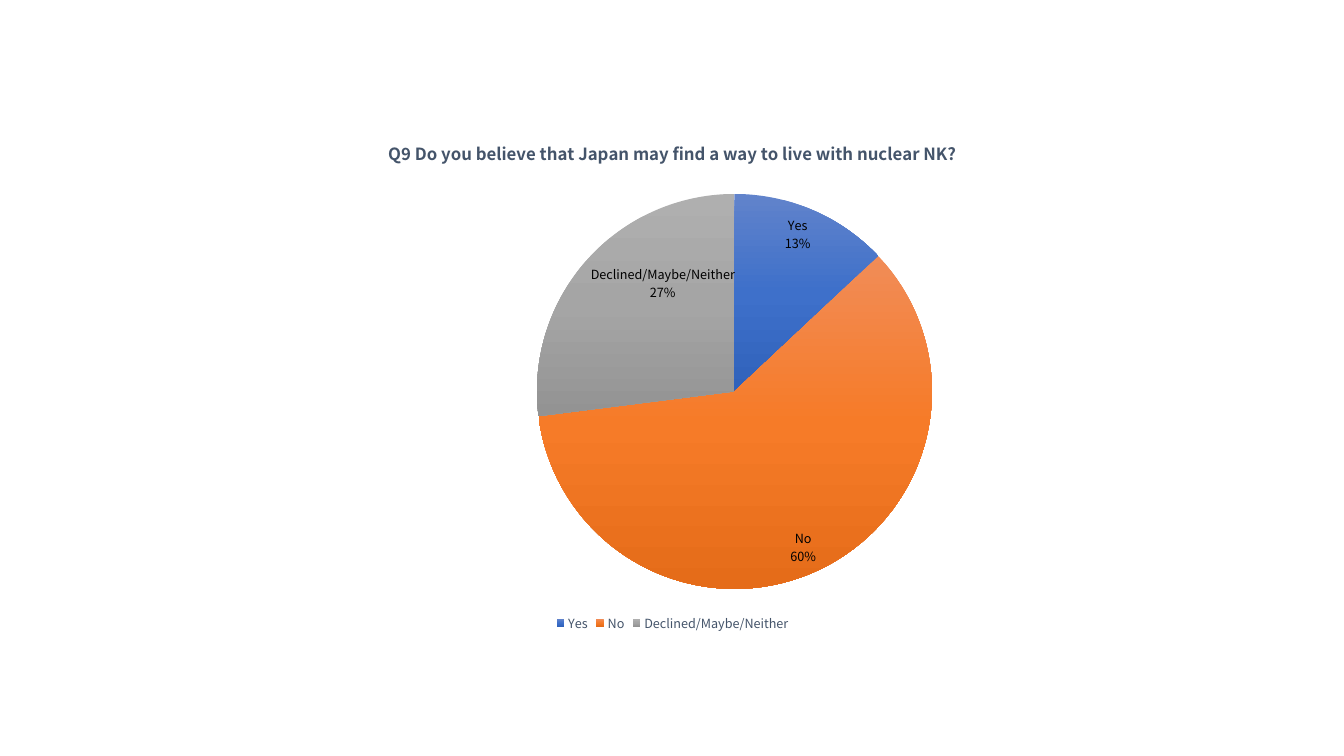
from pptx import Presentation
from pptx import util as u
from pptx.chart import data
from pptx.dml import color
from pptx.enum import chart as kinds
from pptx.oxml import ns, parse_xml

SCALE = 914400 / 100.8
FONT = "Noto Sans CJK KR"
COLORS = {"title": "44546A", "label": "000000"}
QUESTION = "Q9 Do you believe that Japan may find a way to live with nuclear NK?"
ANSWERS = {
    "Yes": (13, ("6183CB", "3E70CA", "3062BB")),
    "No": (60, ("F18C57", "F67B28", "E56C19")),
    "Declined/Maybe/Neither": (27, ("AFAFAF", "A5A5A5", "939393")),
}


def px(length):
    return u.Emu(round(length * SCALE))


def style_font(font, size, tint, bold=False):
    font.name = FONT
    font.size = u.Pt(size)
    font.bold = bold
    font.color.rgb = color.RGBColor.from_string(COLORS[tint])


def write_text(frame, wording, **style):
    span = frame.paragraphs[0].add_run()
    span.text = wording
    style_font(span.font, **style)


class SurveySlide:
    """Holds the survey style and the slide being drawn."""

    def __init__(self, deck):
        self.page = deck.slides.add_slide(deck.slide_layouts[6])

    def add_pie(self, title, answers, box, pie_box):
        numbers = data.CategoryChartData(number_format="0")
        numbers.categories = list(answers)
        numbers.add_series(title, [share for share, _ in answers.values()])
        frame = self.page.shapes.add_chart(
            kinds.XL_CHART_TYPE.PIE, *map(px, box), numbers)
        chart = frame.chart
        style_font(chart.font, size=10, tint="label")
        chart.has_title = True
        write_text(chart.chart_title.text_frame, title,
                   size=12, tint="title", bold=True)
        chart.chart_title.include_in_layout = False
        self.add_legend(chart)
        self.add_labels(chart.plots[0])
        self.place_pie(chart, box, pie_box)
        for index, (_, stops) in enumerate(answers.values()):
            self.shade_slice(chart, index, stops)

    def add_legend(self, chart):
        chart.has_legend = True
        chart.legend.position = kinds.XL_LEGEND_POSITION.BOTTOM
        chart.legend.include_in_layout = False
        style_font(chart.legend.font, size=9, tint="title")

    def add_labels(self, plot):
        plot.vary_by_categories = True
        plot.has_data_labels = True
        labels = plot.data_labels
        labels.show_category_name = True
        labels.show_percentage = True
        labels.show_value = False
        labels.number_format = "0%"
        labels.number_format_is_linked = False
        labels.position = kinds.XL_LABEL_POSITION.INSIDE_END
        style_font(labels.font, size=9, tint="label")

    def place_pie(self, chart, box, pie_box):
        left, top, width, height = box
        x, y, w, h = pie_box
        shares = {"x": (x - left) / width, "y": (y - top) / height,
                  "w": w / width, "h": h / height}
        values = "".join(f'<c:{key} val="{share:.4f}"/>'
                         for key, share in shares.items())
        area = chart.element.xpath("c:chart/c:plotArea")[0]
        for layout in area.xpath("c:layout"):
            area.remove(layout)
        area.insert(0, parse_xml(
            f'<c:layout {ns.nsdecls("c")}><c:manualLayout>'
            '<c:layoutTarget val="inner"/>'
            '<c:xMode val="edge"/><c:yMode val="edge"/>'
            f'{values}</c:manualLayout></c:layout>'))

    def shade_slice(self, chart, index, stops):
        point = chart.plots[0].series[0].points[index]
        point.format.line.fill.background()
        marks = "".join(
            f'<a:gs pos="{step * 50000}"><a:srgbClr val="{stop}"/></a:gs>'
            for step, stop in enumerate(stops))
        look = chart.element.xpath(
            f'.//c:dPt[c:idx/@val="{index}"]/c:spPr')[0]
        look.insert(0, parse_xml(
            f'<a:gradFill {ns.nsdecls("a")} rotWithShape="1">'
            f'<a:gsLst>{marks}</a:gsLst>'
            '<a:lin ang="5400000" scaled="0"/></a:gradFill>'))


def main():
    deck = Presentation()
    deck.slide_width, deck.slide_height = px(1344), px(756)
    slide = SurveySlide(deck)
    slide.add_pie(QUESTION, ANSWERS, box=(216, 120, 913, 516),
                  pie_box=(537, 194, 395, 395))
    deck.save("out.pptx")


if __name__ == "__main__":
    main()
